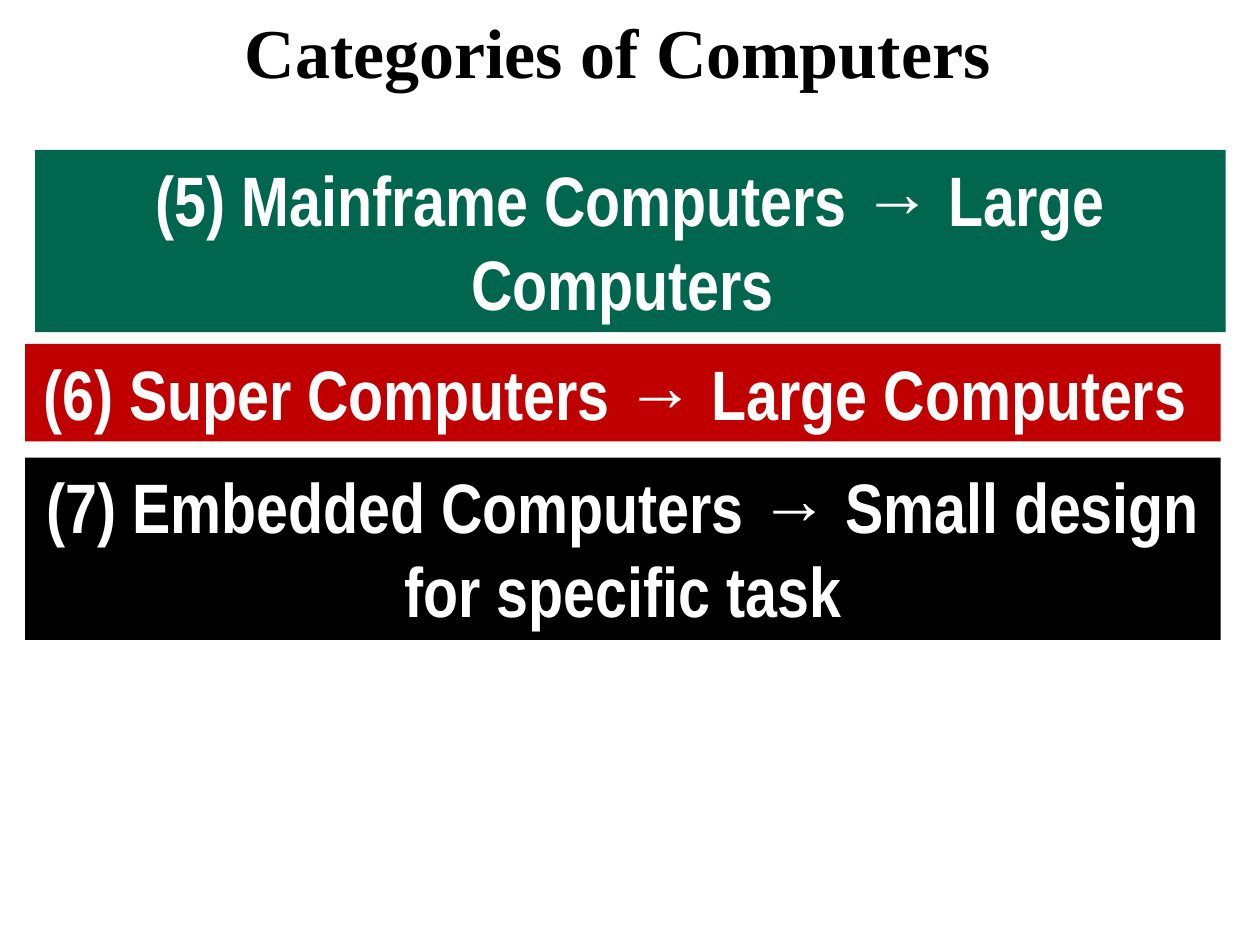
import pptx
import pptx.util
import pptx.dml.color
import pptx.enum.shapes
import pptx.enum.text

Pt = pptx.util.Pt
RGB = pptx.dml.color.RGBColor.from_string
COLORS = {"black": "000000", "white": "FFFFFF", "red": "C00000", "green": "00664D"}

deck = pptx.Presentation()
deck.slide_width, deck.slide_height = Pt(720), Pt(540)
page = deck.slides.add_slide(deck.slide_layouts[6])


def write(box, text, *, font, color, size=40):
    frame = box.text_frame
    frame.word_wrap = True
    frame.auto_size = pptx.enum.text.MSO_AUTO_SIZE.SHAPE_TO_FIT_TEXT
    frame.vertical_anchor = pptx.enum.text.MSO_ANCHOR.TOP
    para = frame.paragraphs[0]
    para.alignment = pptx.enum.text.PP_ALIGN.CENTER
    span = para.add_run()
    span.text = text
    span.font.name = font
    span.font.size = Pt(size)
    span.font.bold = True
    span.font.color.rgb = RGB(COLORS[color])


# Title
title = page.shapes.add_textbox(Pt(48), Pt(1.5), Pt(610), Pt(55.7))
write(title, "Categories of Computers", font="Times New Roman", color="black")

# Category bars: left, top, width, height, fill, text
bars = [
    (20, 85.7, 680.4, 104.2, "green", "(5) Mainframe Computers → Large Computers "),
    (14.4, 196.5, 683.2, 55.7, "red", "(6) Super Computers → Large Computers "),
    (14.4, 261.5, 683.2, 104.2, "black",
     "(7) Embedded Computers → Small design for specific task"),
]
for left, top, width, height, fill, text in bars:
    bar = page.shapes.add_shape(
        pptx.enum.shapes.MSO_SHAPE.RECTANGLE, Pt(left), Pt(top), Pt(width), Pt(height))
    bar.shadow.inherit = False
    bar.fill.solid()
    bar.fill.fore_color.rgb = RGB(COLORS[fill])
    bar.line.fill.background()
    write(bar, text, font="Arial Narrow", color="white")

deck.save("out.pptx")
